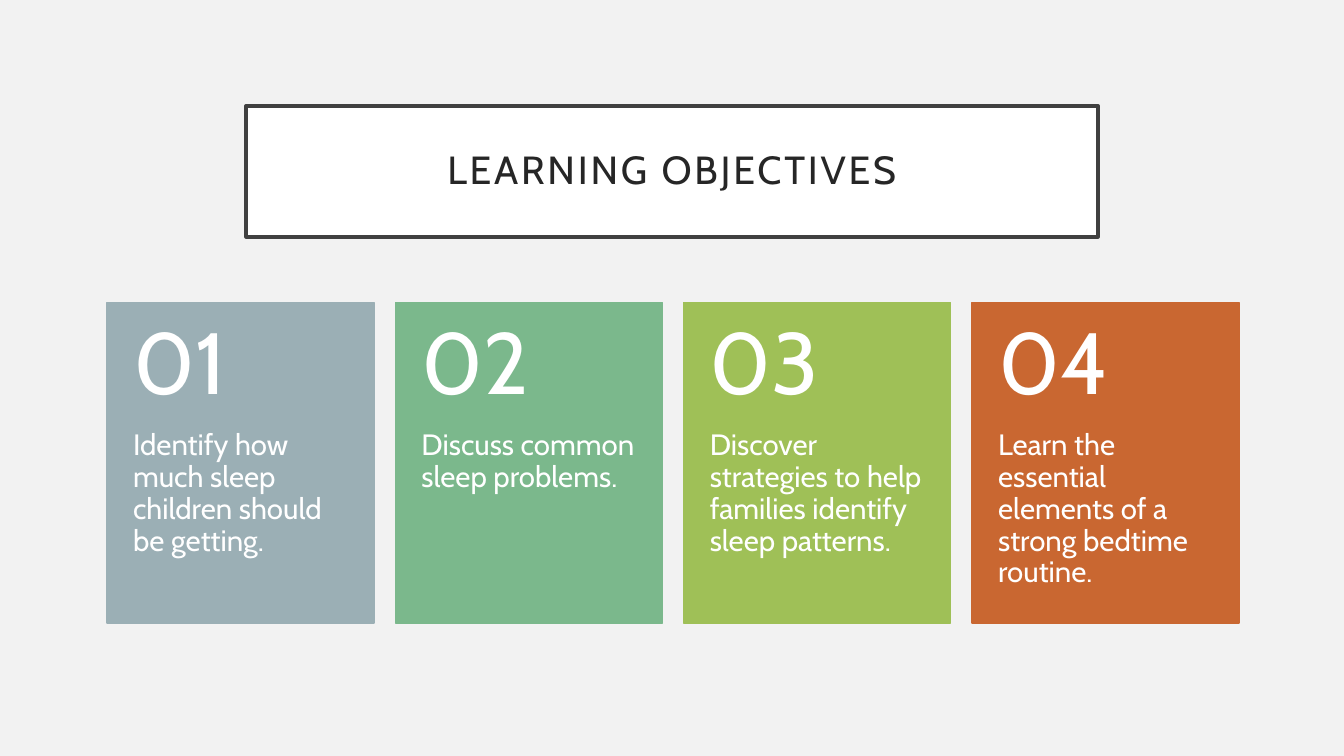
"""Build the learning objectives slide: a framed title above four numbered cards."""
from pptx import Presentation
from pptx.dml.color import RGBColor
from pptx.enum.shapes import MSO_SHAPE as SHAPE
from pptx.enum.text import MSO_ANCHOR as ANCHOR, PP_ALIGN as ALIGN
from pptx.util import Inches, Pt


def paint(fmt, color):
    fmt.solid()
    fmt.fore_color.rgb = RGBColor.from_string(color)


def write(sp, text, size, color, insets, anchor, align=ALIGN.LEFT):
    tf = sp.text_frame
    tf.word_wrap = True
    tf.vertical_anchor = anchor
    tf.margin_left, tf.margin_top, tf.margin_right, tf.margin_bottom = map(Inches, insets)
    p = tf.paragraphs[0]
    p.alignment = align
    p.line_spacing = 0.9
    r = p.add_run()
    r.text = text
    r.font.name = "Cabin"
    r.font.size = Pt(size)
    paint(r.font.fill, color)
    return r


prs = Presentation()
prs.slide_width, prs.slide_height = Inches(13.33), Inches(7.5)
s = prs.slides.add_slide(prs.slide_layouts[6])
paint(s.background.fill, "F2F2F2")

title_w = Inches(8.45)
title = s.shapes.add_shape(SHAPE.RECTANGLE, (prs.slide_width - title_w) // 2, Inches(1.05),
                           title_w, Inches(1.3))
title.shadow.inherit = False
paint(title.fill, "FFFFFF")
paint(title.line.fill, "404040")
title.line.width = Pt(2.5)
r = write(title, "LEARNING OBJECTIVES", 28, "262626", [0.2] * 4, ANCHOR.MIDDLE, ALIGN.CENTER)
r.font._element.set("spc", "200")

cards = [
    ("9BAFB5", "Identify how much sleep children should be getting."),
    ("7BB88C", "Discuss common sleep problems."),
    ("9FC057", "Discover strategies to help families identify sleep patterns."),
    ("C96731", "Learn the essential elements of a strong bedtime routine."),
]
left, top, pitch = Inches(1.06), Inches(3), Inches(2.86)
card_w, card_h = Inches(2.65), Inches(3.18)
number_h = int(card_h * 0.4)

for i, (color, goal) in enumerate(cards):
    x = left + i * pitch
    group = s.shapes.add_group_shape().shapes
    card = group.add_shape(SHAPE.RECTANGLE, x, top, card_w, card_h)
    card.shadow.inherit = False
    paint(card.fill, color)
    paint(card.line.fill, color)
    card.line.width = Pt(1)
    body = group.add_textbox(x, top + number_h, card_w, card_h - number_h)
    write(body, goal, 21, "FFFFFF", (0.26, 0, 0.26, 0.36), ANCHOR.TOP)
    number = group.add_textbox(x, top, card_w, number_h)
    write(number, f"{i + 1:02}", 62, "FFFFFF", (0.26, 0.18, 0.26, 0.18), ANCHOR.MIDDLE)

prs.save("out.pptx")
